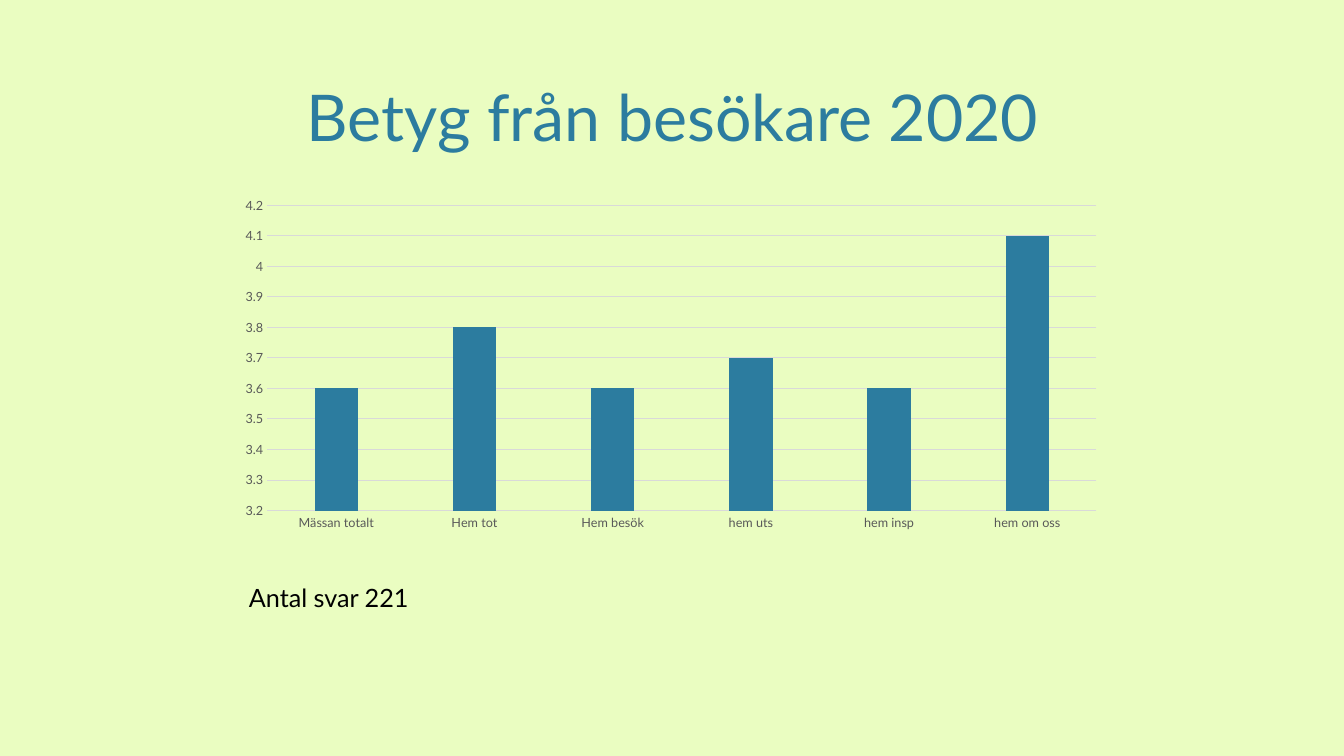
"""Build the slide with visitor ratings for 2020."""
from pptx import Presentation
from pptx.chart.data import CategoryChartData
from pptx.dml.color import RGBColor
from pptx.enum.chart import XL_CHART_TYPE, XL_TICK_MARK
from pptx.enum.text import MSO_ANCHOR, MSO_AUTO_SIZE, PP_ALIGN
from pptx.util import Inches, Pt

FACE = "Lato"
BACK, BLUE, BLACK, GREY, RULE = "EAFDC1", "2C7C9F", "000000", "595959", "D9D9D9"
RATINGS = {
    "Mässan totalt": 3.6,
    "Hem tot": 3.8,
    "Hem besök": 3.6,
    "hem uts": 3.7,
    "hem insp": 3.6,
    "hem om oss": 4.1,
}
TITLE = ("Betyg från besökare 2020", (2.27, 0.12, 8.8, 1.46), 46, BLUE,
         PP_ALIGN.CENTER, MSO_ANCHOR.BOTTOM, MSO_AUTO_SIZE.NONE)
COUNT = ("Antal svar 221", (2.37, 5.73, 3.32, 0.4), 18, BLACK,
         PP_ALIGN.LEFT, MSO_ANCHOR.TOP, MSO_AUTO_SIZE.SHAPE_TO_FIT_TEXT)
PLOT = (2.26, 1.89, 8.79, 3.44)


def paint(color, code):
    """Set a color from a hex string."""
    color.rgb = RGBColor.from_string(code)


def style(font, size, code):
    """Set face, size and color of a font."""
    font.name = FACE
    font.size = Pt(size)
    paint(font.color, code)


def rule(line):
    """Draw a thin grey line."""
    line.width = Pt(0.75)
    paint(line.color, RULE)


def add_text(slide, words, place, size, code, align, anchor, fit):
    """Add one line of text."""
    frame = slide.shapes.add_textbox(*map(Inches, place)).text_frame
    frame.word_wrap = True
    frame.auto_size = fit
    frame.vertical_anchor = anchor
    para = frame.paragraphs[0]
    para.alignment = align
    run = para.add_run()
    run.text = words
    style(run.font, size, code)


def add_bars(slide):
    """Add the column chart of ratings."""
    data = CategoryChartData()
    data.categories = list(RATINGS)
    data.add_series("Series 1", list(RATINGS.values()))
    chart = slide.shapes.add_chart(
        XL_CHART_TYPE.COLUMN_CLUSTERED, *map(Inches, PLOT), data).chart
    chart.has_title = False
    chart.has_legend = False
    style(chart.font, 10, BLACK)
    plot = chart.plots[0]
    plot.vary_by_categories = False
    plot.gap_width = 219
    plot.overlap = -27
    fill = plot.series[0].format.fill
    fill.solid()
    paint(fill.fore_color, BLUE)
    base, scale = chart.category_axis, chart.value_axis
    for axis in (base, scale):
        axis.major_tick_mark = axis.minor_tick_mark = XL_TICK_MARK.NONE
        style(axis.tick_labels.font, 9, GREY)
    rule(base.format.line)
    scale.format.line.fill.background()
    scale.minimum_scale, scale.maximum_scale = 3.2, 4.2
    scale.major_unit = 0.1
    scale.has_major_gridlines = True
    rule(scale.major_gridlines.format.line)


def main():
    """Build and save the slide."""
    deck = Presentation()
    deck.slide_width, deck.slide_height = Inches(13.33), Inches(7.5)
    slide = deck.slides.add_slide(deck.slide_layouts[6])
    fill = slide.background.fill
    fill.solid()
    paint(fill.fore_color, BACK)
    add_bars(slide)
    for item in (TITLE, COUNT):
        add_text(slide, *item)
    deck.save("out.pptx")


if __name__ == "__main__":
    main()
